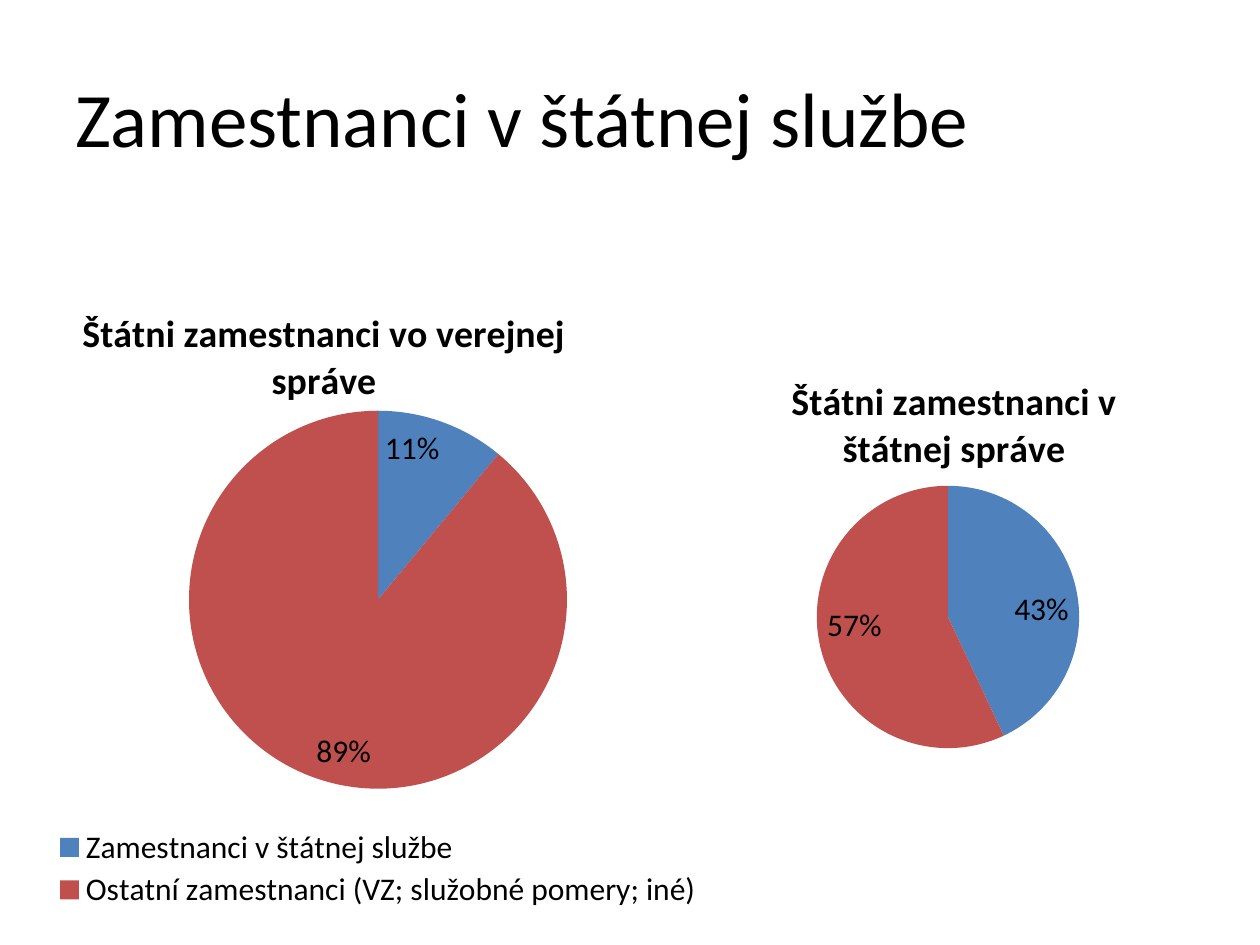
from lxml import etree
from pptx import Presentation
from pptx.chart.data import CategoryChartData
from pptx.dml.color import RGBColor
from pptx.enum.chart import XL_CHART_TYPE, XL_LABEL_POSITION, XL_LEGEND_POSITION
from pptx.enum.text import MSO_ANCHOR
from pptx.oxml.ns import qn
from pptx.util import Inches, Pt

PIE = XL_CHART_TYPE.PIE
INSIDE_END = XL_LABEL_POSITION.INSIDE_END
BOTTOM = XL_LEGEND_POSITION.BOTTOM
MIDDLE = MSO_ANCHOR.MIDDLE

THEME = {
    "font": "Calibri",
    "text": RGBColor.from_string("000000"),
    "slices": [RGBColor.from_string(c) for c in ("4F81BD", "C0504D")],
    "title": Pt(44),
    "chart_title": Pt(21.6),
    "body": Pt(18),
}


def style_font(font, size, bold=False):
    font.name = THEME["font"]
    font.size = size
    font.bold = bold
    font.color.rgb = THEME["text"]


def place(element, index, **fractions):
    for old in element.findall(qn("c:layout")):
        element.remove(old)
    layout = etree.Element(qn("c:layout"))
    manual = etree.SubElement(layout, qn("c:manualLayout"))
    if element.tag == qn("c:plotArea"):
        etree.SubElement(manual, qn("c:layoutTarget")).set("val", "inner")
    for axis in ("x", "y"):
        etree.SubElement(manual, qn(f"c:{axis}Mode")).set("val", "edge")
    for name, value in fractions.items():
        etree.SubElement(manual, qn(f"c:{name}")).set("val", str(value))
    element.insert(index, layout)


prs = Presentation()
prs.slide_width, prs.slide_height = Inches(10), Inches(7.5)
s = prs.slides.add_slide(prs.slide_layouts[6])

tf = s.shapes.add_textbox(Inches(0.5), Inches(0.3), Inches(9), Inches(1.25)).text_frame
tf.word_wrap = True
tf.vertical_anchor = MIDDLE
tf.text = "Zamestnanci v štátnej službe"
style_font(tf.paragraphs[0].runs[0].font, THEME["title"])

pies = [
    {
        "title": "Štátni zamestnanci vo verejnej správe",
        "categories": ["Zamestnanci v štátnej službe",
                       "Ostatní zamestnanci (VZ; služobné pomery; iné)"],
        "values": (11, 89),
        "box": (0, 2.17, 6, 5.08),
        "title_at": {"x": 0.1, "y": 0.04},
        "plot_at": {"x": 0.25, "y": 0.21, "w": 0.5, "h": 0.6},
        "legend_at": {"x": 0.07, "y": 0.86, "w": 0.86, "h": 0.14},
    },
    {
        "title": "Štátni zamestnanci v štátnej správe",
        "categories": ["1", "2"],
        "values": (43, 57),
        "box": (5.42, 2.75, 4.25, 3.33),
        "title_at": {"x": 0.19, "y": 0.05},
        "plot_at": {"x": 0.25, "y": 0.33, "w": 0.49, "h": 0.63},
        "legend_at": None,
    },
]

for pie in pies:
    data = CategoryChartData()
    data.categories = pie["categories"]
    data.add_series("Series 1", pie["values"])
    chart = s.shapes.add_chart(PIE, *map(Inches, pie["box"]), data).chart
    style_font(chart.font, THEME["body"])

    chart.has_title = True
    tf = chart.chart_title.text_frame
    tf.text = pie["title"]
    style_font(tf.paragraphs[0].runs[0].font, THEME["chart_title"], bold=True)
    chart.chart_title.include_in_layout = False
    place(chart.element.find(".//" + qn("c:title")), 1, **pie["title_at"])
    place(chart.element.find(".//" + qn("c:plotArea")), 0, **pie["plot_at"])

    chart.has_legend = pie["legend_at"] is not None
    if chart.has_legend:
        chart.legend.position = BOTTOM
        chart.legend.include_in_layout = False
        style_font(chart.legend.font, THEME["body"])
        place(chart.element.find(".//" + qn("c:legend")), 1, **pie["legend_at"])

    plot = chart.plots[0]
    plot.vary_by_categories = True
    for i, color in enumerate(THEME["slices"]):
        fill = plot.series[0].points[i].format.fill
        fill.solid()
        fill.fore_color.rgb = color

    plot.has_data_labels = True
    labels = plot.data_labels
    labels.show_value = False
    labels.show_percentage = True
    labels.number_format = "0%"
    labels.number_format_is_linked = False
    labels.position = INSIDE_END
    style_font(labels.font, THEME["body"])

prs.save("out.pptx")
